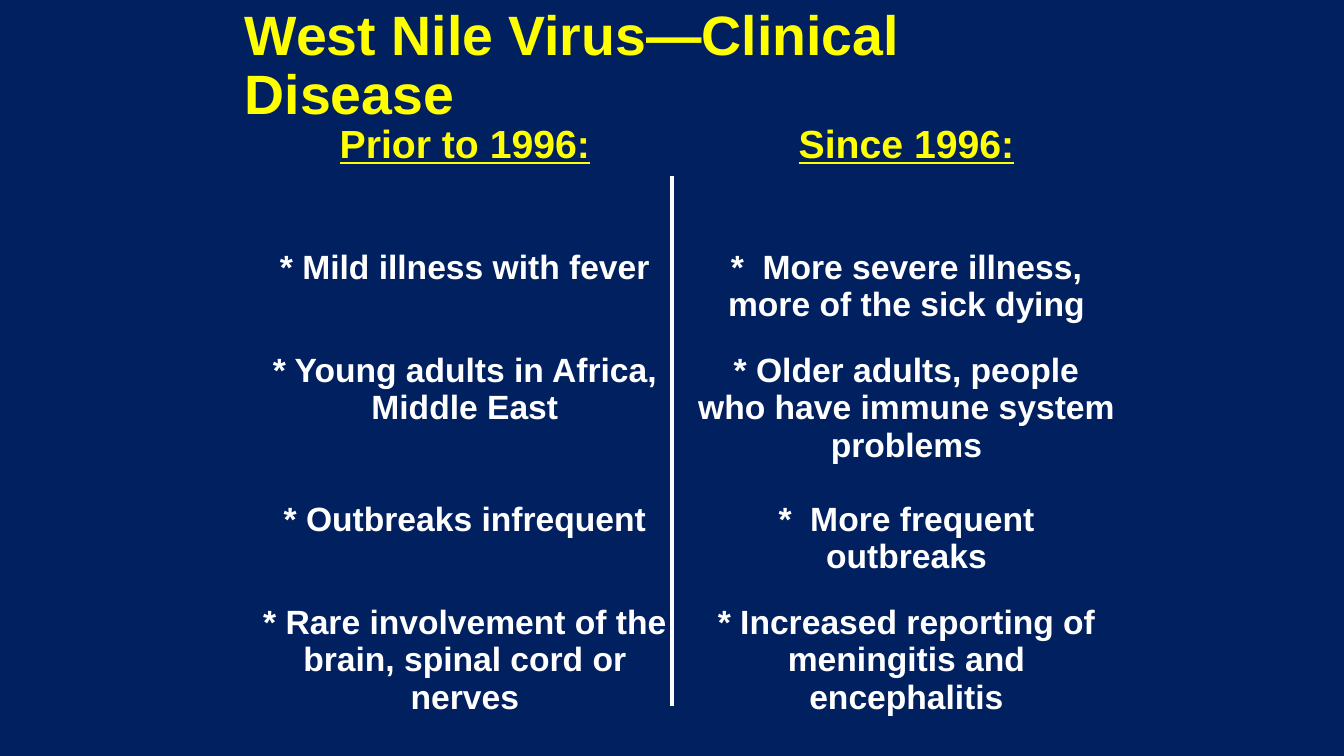
from pptx import Presentation
from pptx import util as u
from pptx.dml.color import RGBColor
from pptx.enum import shapes, text
from pptx.oxml import parse_xml
from pptx.oxml.ns import nsdecls

HUES = {"navy": "002060", "gold": "FFFF00", "white": "FFFFFF"}
ROWS = [
    ("Prior to 1996:", "Since 1996:"),
    ("* Mild illness with fever", "*  More severe illness, more of the sick dying"),
    ("* Young adults in Africa, Middle East",
     "* Older adults, people who have immune system problems"),
    ("* Outbreaks infrequent", "*  More frequent outbreaks"),
    ("* Rare involvement of the brain, spinal cord or nerves",
     "* Increased reporting of meningitis and encephalitis"),
]
HEIGHTS = [1.25, 1.02, 1.48, 1.02, 1.47]
COL = 4.38
PLAIN = "{2D5ABB26-0587-4C30-8999-92F81FD0307C}"


def style(par, size, hue, line=False):
    for run in par.runs:
        font = run.font
        font.name = "Arial"
        font.size = u.Pt(size)
        font.bold = True
        font.underline = line
        font.color.rgb = RGBColor.from_string(HUES[hue])


deck = Presentation()
deck.slide_width = u.Inches(13.33)
deck.slide_height = u.Inches(7.5)
slide = deck.slides.add_slide(deck.slide_layouts[6])
back = slide.background.fill
back.solid()
back.fore_color.rgb = RGBColor.from_string(HUES["navy"])

title = slide.shapes.add_textbox(
    u.Inches(2.33), u.Inches(0.25), u.Inches(8.67), u.Inches(0.83))
frame = title.text_frame
frame.word_wrap = True
frame.vertical_anchor = text.MSO_ANCHOR.MIDDLE
frame.text = "West Nile Virus—Clinical Disease"
frame.paragraphs[0].line_spacing = 0.9
style(frame.paragraphs[0], 39.6, "gold")

grid = slide.shapes.add_table(
    len(ROWS), 2, u.Inches(2.42), u.Inches(1.17),
    u.Inches(2 * COL), u.Inches(sum(HEIGHTS))).table
grid.first_row = False
grid.horz_banding = False
grid._tbl.tblPr.find("{*}tableStyleId").text = PLAIN
for col in grid.columns:
    col.width = u.Inches(COL)
for r, (pair, high) in enumerate(zip(ROWS, HEIGHTS)):
    grid.rows[r].height = u.Inches(high)
    for c, words in enumerate(pair):
        cell = grid.cell(r, c)
        cell.fill.background()
        cell.text_frame.text = words
        par = cell.text_frame.paragraphs[0]
        par.alignment = text.PP_ALIGN.CENTER
        if r == 0:
            style(par, 28, "gold", True)
        else:
            style(par, 24, "white")

mid = deck.slide_width // 2
rule = slide.shapes.add_connector(
    shapes.MSO_CONNECTOR.STRAIGHT, mid, u.Inches(1.75), mid, u.Inches(7))
rule.line.color.rgb = RGBColor.from_string(HUES["white"])
rule.line.width = u.Pt(3)
rule._element.spPr.append(parse_xml(f"<a:effectLst {nsdecls('a')}/>"))

deck.save("out.pptx")
